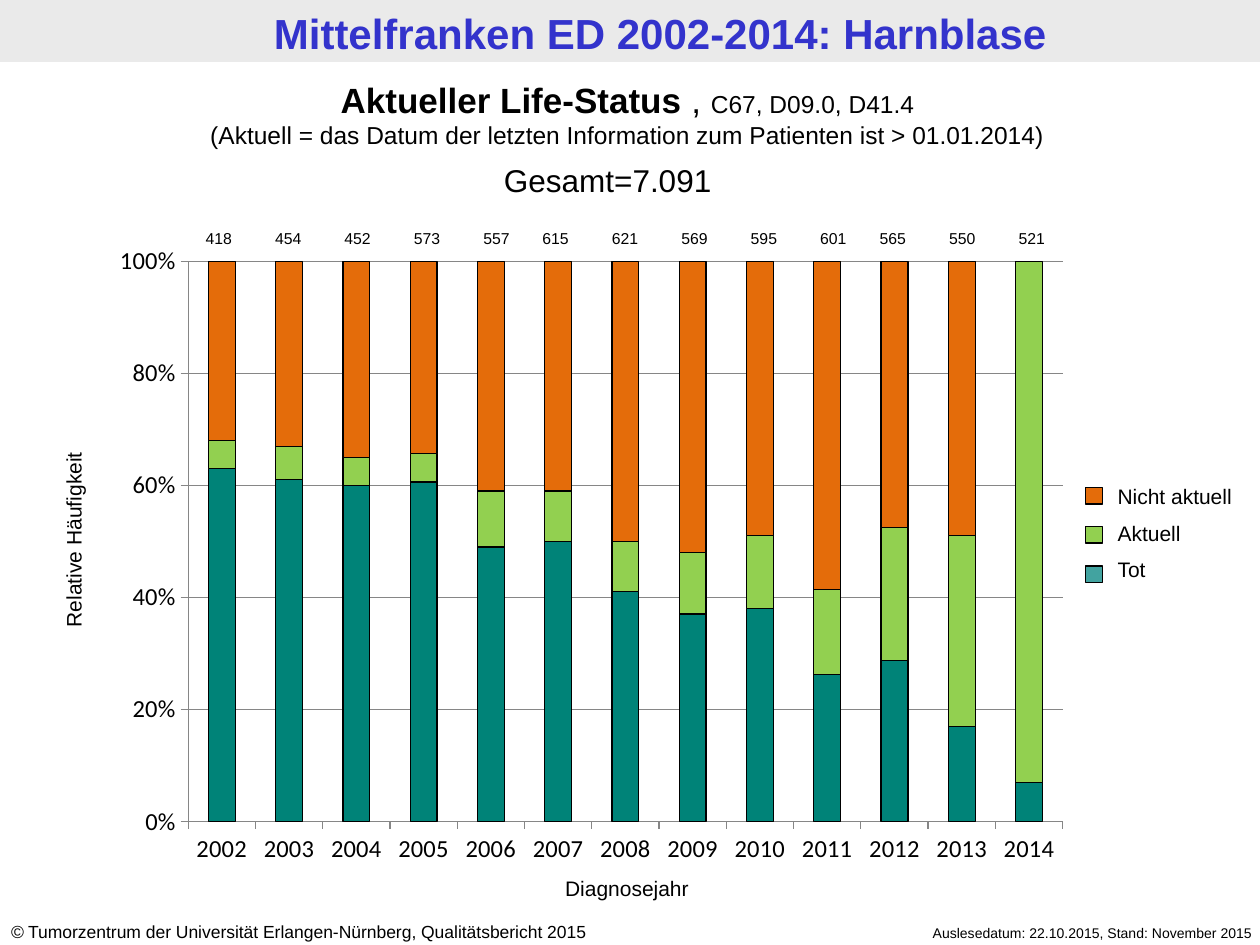
from lxml import etree
from pptx import Presentation
from pptx.chart.data import CategoryChartData
from pptx.dml.color import RGBColor
from pptx.enum.chart import XL_CHART_TYPE, XL_TICK_MARK
from pptx.enum.shapes import MSO_SHAPE
from pptx.enum.text import MSO_AUTO_SIZE, PP_ALIGN
from pptx.oxml import parse_xml
from pptx.oxml.ns import nsdecls, qn
from pptx.util import Cm, Pt

COLORS = {"text": "000000", "title": "3333CC", "band": "EAEAEA", "grid": "868686",
          "dead": "008378", "dead_key": "008380", "current": "92D050", "outdated": "E46C0A"}
YEARS = [str(year) for year in range(2002, 2015)]
STATUS = [
    ("Tot", "dead", (63, 61, 60, 60, 49, 50, 41, 37, 38, 26, 29, 17, 7)),
    ("Aktuell", "current", (5, 6, 5, 5, 10, 9, 9, 11, 13, 15, 24, 34, 93)),
    ("Nicht aktuell", "outdated", (32, 33, 35, 34, 41, 41, 50, 52, 49, 58, 48, 49, 0)),
]
# Left edge of each group of case counts
COUNTS = [
    (3.71, (418, 454, 452, 573, 557)),
    (10.5, (615, 621, 569, 595, 601)),
    (17.3, (565, 550, 521)),
]


def rgb(name):
    return RGBColor.from_string(COLORS[name])


class SlideBuilder:
    font = {"name": "Arial", "size": Pt(12), "bold": False, "italic": False}

    def __init__(self, prs):
        self.slide = prs.slides.add_slide(prs.slide_layouts[6])

    def style(self, font, color="text", **fmt):
        for key, value in {**self.font, **fmt}.items():
            setattr(font, key, value)
        font.color.rgb = rgb(color)

    def outline(self, line):
        line.color.rgb = rgb("text")
        line.width = Pt(0.75)

    def text(self, box, paragraphs, align=PP_ALIGN.LEFT, before=0, rotation=0, indent=0.25):
        """Each paragraph is a list of (text, format) runs."""
        sp = self.slide.shapes.add_textbox(*map(Cm, box))
        sp.rotation = rotation
        tf = sp.text_frame
        tf.word_wrap = True
        tf.auto_size = MSO_AUTO_SIZE.SHAPE_TO_FIT_TEXT
        tf.margin_left = Cm(indent)
        for i, runs in enumerate(paragraphs):
            p = tf.add_paragraph() if i else tf.paragraphs[0]
            p.alignment = align
            if i and before:
                p.space_before = Pt(before)
            for words, fmt in runs:
                r = p.add_run()
                r.text = words
                self.style(r.font, **fmt)

    def rect(self, box, color, line=False, alpha=None):
        sp = self.slide.shapes.add_shape(MSO_SHAPE.RECTANGLE, *map(Cm, box))
        sp.shadow.inherit = False
        sp.fill.solid()
        sp.fill.fore_color.rgb = rgb(color)
        if alpha:
            clr = sp.fill._xPr.find(".//" + qn("a:srgbClr"))
            etree.SubElement(clr, qn("a:alpha"), val=str(alpha * 1000))
        if line:
            self.outline(sp.line)
        else:
            sp.line.fill.background()

    def chart(self, box, categories, series, plot_box):
        data = CategoryChartData()
        data.categories = categories
        for name, _, values in series:
            data.add_series(name, values)
        chart = self.slide.shapes.add_chart(
            XL_CHART_TYPE.COLUMN_STACKED_100, *map(Cm, box), data).chart
        chart.has_legend = chart.has_title = False
        self.style(chart.font, name="Calibri", size=Pt(14))

        plot = chart.plots[0]
        plot.gap_width, plot.overlap = 150, 100
        plot.vary_by_categories = False
        for ser, (_, color, _) in zip(plot.series, series):
            ser.format.fill.solid()
            ser.format.fill.fore_color.rgb = rgb(color)
            self.outline(ser.format.line)

        axis = chart.value_axis
        axis.minimum_scale, axis.maximum_scale, axis.major_unit = 0, 1, 0.2
        axis.tick_labels.number_format = "0%"
        axis.tick_labels.number_format_is_linked = False
        axis.has_major_gridlines = True
        for ax in (axis, chart.category_axis):
            ax.major_tick_mark = XL_TICK_MARK.OUTSIDE
        for owner in (axis, axis.major_gridlines, chart.category_axis):
            owner.format.line.color.rgb = rgb("grid")
            owner.format.line.width = Pt(0.75)

        # Fixed inner plot area, as fractions of the chart
        area = chart._chartSpace.find(".//" + qn("c:plotArea"))
        for old in area.findall(qn("c:layout")):
            area.remove(old)
        sizes = "".join(f'<c:{tag} val="{v}"/>' for tag, v in zip("xywh", plot_box))
        area.insert(0, parse_xml(
            f'<c:layout {nsdecls("c")}><c:manualLayout><c:layoutTarget val="inner"/>'
            f'<c:xMode val="edge"/><c:yMode val="edge"/>{sizes}</c:manualLayout></c:layout>'))


def main():
    prs = Presentation()
    prs.slide_width, prs.slide_height = Cm(25.4), Cm(19.05)
    s = SlideBuilder(prs)
    center, right = PP_ALIGN.CENTER, PP_ALIGN.RIGHT

    # Title band
    s.rect((0, 0, 25.4, 1.25), "band")
    s.text((0.15, 0.03, 25.4, 1.25), [[("Mittelfranken ED 2002-2014: Harnblase",
           {"size": Pt(24), "bold": True, "color": "title"})]], center, indent=1.17)

    # Footer
    s.text((16.89, 18.52, 8.61, 0.6),
           [[("Auslesedatum: 22.10.2015, Stand: November 2015", {"size": Pt(8)})]], right)
    s.text((-0.03, 18.44, 13.3, 0.68), [[
        ("©", {"size": Pt(10), "italic": True}),
        (" Tumorzentrum der Universität Erlangen-Nürnberg, Qualitätsbericht 2015",
         {"size": Pt(10)})]])

    # Chart and axis titles
    s.chart((2.01, 4.75, 19.81, 12.98), YEARS, STATUS, (0.09, 0.04, 0.89, 0.87))
    s.text((-1.57, 10.49, 6.12, 0.78), [[("Relative Häufigkeit", {})]], center, rotation=270)
    s.text((9.78, 17.53, 5.72, 0.78), [[("Diagnosejahr", {})]], center)

    # Case counts above the columns
    for left, counts in COUNTS:
        for i, count in enumerate(counts):
            s.text((left + 1.4 * i, 4.49, 1.4, 0.64),
                   [[(str(count), {"size": Pt(9)})]], center)

    # Legend
    s.text((22.28, 9.63, 3.12, 2.31), [[(name, {})] for name, _, _ in reversed(STATUS)],
           before=6.5)
    for i, (color, alpha) in enumerate([("outdated", None), ("current", None), ("dead_key", 74)]):
        s.rect((21.89, 9.83 + 0.79 * i, 0.33, 0.33), color, line=True, alpha=alpha)

    # Headings
    small = {"size": Pt(14)}
    s.text((-0.1, 1.45, 25.5, 1.7), [
        [("Aktueller Life-Status ", {"size": Pt(20), "bold": True}),
         (", ", {"size": Pt(20)}), ("C67, D09.0, D41.4", small)],
        [("(Aktuell = das Datum der letzten Information zum Patienten ist > 01.01.2014)", small)],
    ], center)
    s.text((9.91, 3.12, 5.59, 1.02), [[("Gesamt=7.091", {"size": Pt(18)})]])

    prs.save("out.pptx")


if __name__ == "__main__":
    main()
